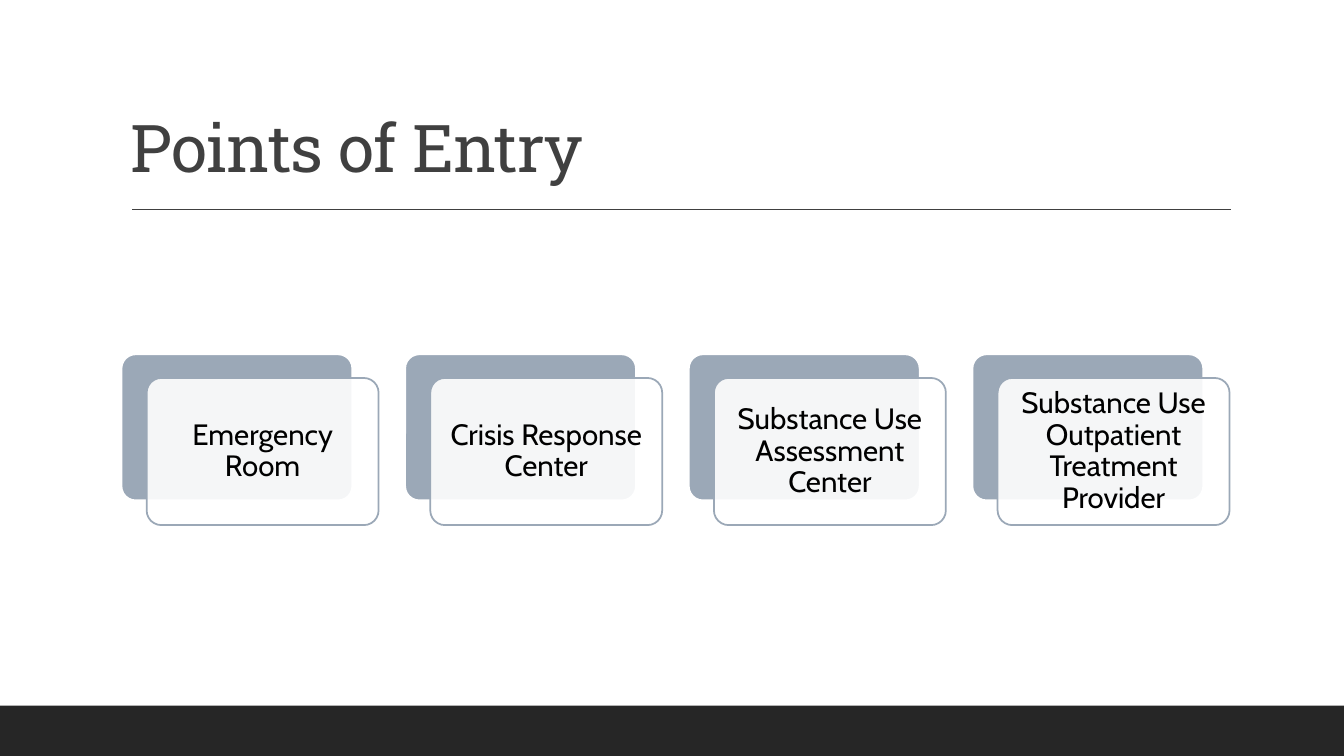
import pptx
import pptx.dml.color
import pptx.enum.shapes
import pptx.enum.text
import pptx.oxml.ns
import pptx.util
from lxml import etree

Inches = pptx.util.Inches
Pt = pptx.util.Pt
MSO_SHAPE = pptx.enum.shapes.MSO_SHAPE
ANCHOR = pptx.enum.text.MSO_ANCHOR
ALIGN = pptx.enum.text.PP_ALIGN
qn = pptx.oxml.ns.qn

COLORS = {
    "white": "FFFFFF",
    "black": "000000",
    "title": "404040",
    "footer": "262626",
    "card": "9BA8B7",
}
ENTRY_POINTS = [
    "Emergency Room",
    "Crisis Response Center",
    "Substance Use Assessment Center",
    "Substance Use Outpatient Treatment Provider",
]


def color(name):
    return pptx.dml.color.RGBColor.from_string(COLORS[name])


def add_block(slide, kind, box, fill, line=None, line_width=0):
    """Add a filled preset shape without shadow; no line unless one is named."""
    shape = slide.shapes.add_shape(kind, *map(Inches, box))
    shape.shadow.inherit = False
    shape.fill.solid()
    shape.fill.fore_color.rgb = color(fill)
    if line:
        shape.line.color.rgb = color(line)
        shape.line.width = Pt(line_width)
    else:
        shape.line.fill.background()
    return shape


def write(frame, text, font, size, ink, anchor, align):
    frame.word_wrap = True
    frame.vertical_anchor = anchor
    frame.text = text
    para = frame.paragraphs[0]
    para.alignment = align
    para.line_spacing = 0.9
    span = para.runs[0]
    span.font.name = font
    span.font.size = Pt(size)
    span.font.color.rgb = color(ink)
    return span


def add_title(slide, text, box):
    """Place the title in the box, with a rule below it."""
    left, top, width, height = box
    title = slide.shapes.add_textbox(*map(Inches, box))
    span = write(title.text_frame, text, "Roboto Slab", 47, "title",
                 ANCHOR.BOTTOM, ALIGN.LEFT)
    span.font._element.set("spc", "-50")

    rule_y = Inches(top + height + 0.18)
    rule = slide.shapes.add_connector(
        pptx.enum.shapes.MSO_CONNECTOR.STRAIGHT,
        Inches(left + 0.11), rule_y, Inches(left + width + 0.01), rule_y)
    rule.line.color.rgb = color("title")
    rule.line.width = Pt(1)
    etree.SubElement(rule._element.spPr, qn("a:effectLst"))


def add_card(slide, text, box):
    """Place a solid card and, offset in front of it, a translucent labelled one."""
    left, top, width, height = box
    shift_x, shift_y = 0.255, 0.24
    back = add_block(slide, MSO_SHAPE.ROUNDED_RECTANGLE, box, "card", "white", 2)
    front = add_block(slide, MSO_SHAPE.ROUNDED_RECTANGLE,
                      (left + shift_x, top + shift_y, width, height),
                      "white", "card", 1.25)
    for card in (back, front):
        card.adjustments[0] = 0.1
    fill_color = front._element.spPr.find(qn("a:solidFill")).find(qn("a:srgbClr"))
    etree.SubElement(fill_color, qn("a:alpha"), val="90000")

    frame = front.text_frame
    frame.margin_left = frame.margin_right = Inches(0.09)
    frame.margin_top = frame.margin_bottom = Inches(0.09)
    write(frame, text, "Cabin", 21, "black", ANCHOR.MIDDLE, ALIGN.CENTER)


def add_card_row(slide, labels, box, pitch):
    """Repeat cards across, starting with the given box."""
    left, top, width, height = box
    for index, label in enumerate(labels):
        add_card(slide, label, (left + index * pitch, top, width, height))


def main():
    deck = pptx.Presentation()
    deck.slide_width = Inches(13.33)
    deck.slide_height = Inches(7.5)
    slide = deck.slides.add_slide(deck.slide_layouts[6])
    slide.background.fill.solid()
    slide.background.fill.fore_color.rgb = color("white")

    add_block(slide, MSO_SHAPE.RECTANGLE, (0, 7, 13.33, 0.5), "footer")
    add_title(slide, "Points of Entry", (1.2, 0.31, 11, 1.59))
    add_card_row(slide, ENTRY_POINTS, (1.2, 3.51, 2.3, 1.46), pitch=2.8133)
    deck.save("out.pptx")


if __name__ == "__main__":
    main()
